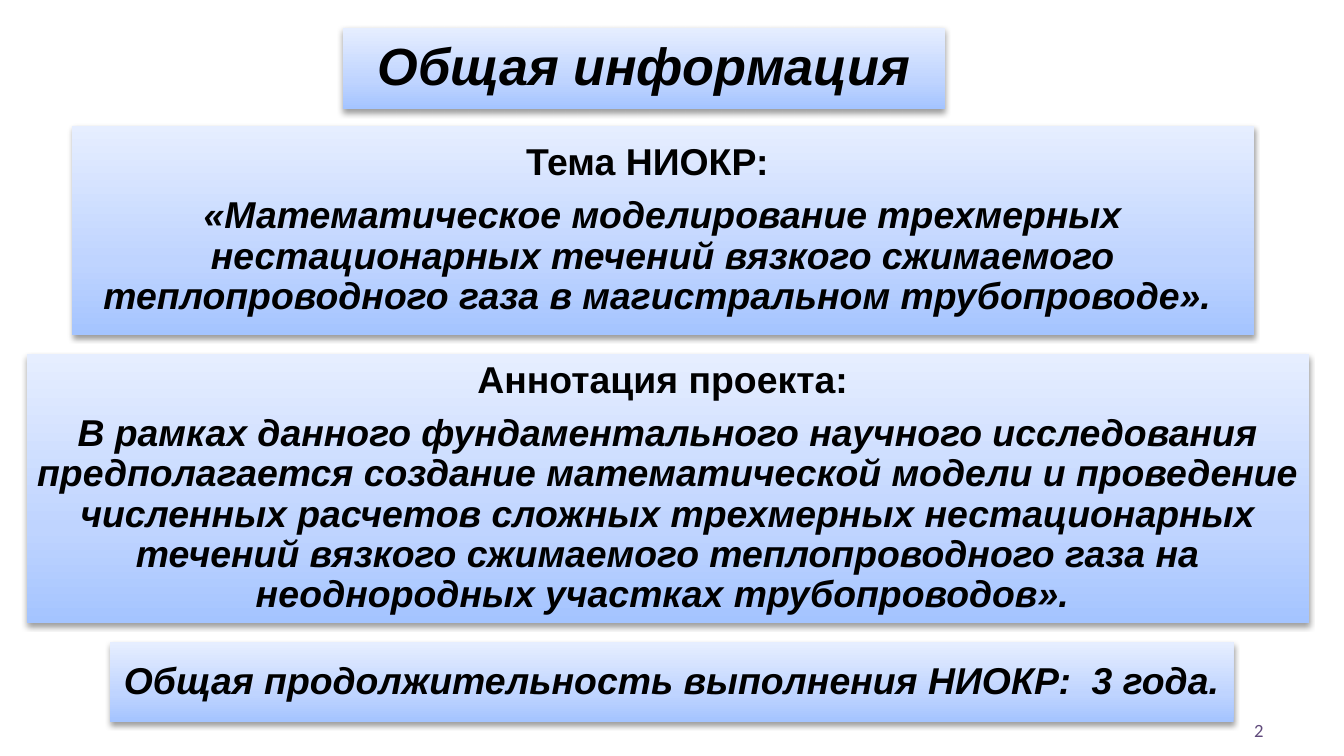
from copy import deepcopy

from lxml.etree import SubElement
from pptx import Presentation
from pptx.dml.color import RGBColor
from pptx.enum.shapes import MSO_SHAPE
from pptx.enum.text import MSO_ANCHOR, MSO_AUTO_SIZE, PP_ALIGN
from pptx.oxml.ns import qn
from pptx.util import Emu, Pt

SCALE = 4572
STOPS = [(0, "A4C4FF"), (0.35, "BFD4FF"), (1, "E6EEFF")]


def px(num):
    """Turn px into EMU."""
    return Emu(num * SCALE)


def tint(code):
    """Turn a hex string into a colour."""
    return RGBColor.from_string(code)


def place(shape, box):
    """Move a shape to its box."""
    shape.left, shape.top, shape.width, shape.height = map(px, box)


def shade(shape):
    """Give a panel its gradient, soft shadow and no outline."""
    shape.fill.gradient()
    shape.fill.gradient_angle = 90
    props = shape._element.spPr
    stops = props.find(".//" + qn("a:gsLst"))
    stops.append(deepcopy(stops[-1]))
    for stop, (pos, code) in zip(shape.fill.gradient_stops, STOPS):
        stop.position = pos
        stop.color.rgb = tint(code)
    shape.line.fill.background()
    shape.shadow.inherit = False
    cast = SubElement(props.find(qn("a:effectLst")), qn("a:outerShdw"),
                      blurRad=str(Pt(3.1)), dist=str(Pt(1.6)),
                      dir="5400000", rotWithShape="0")
    black = SubElement(cast, qn("a:srgbClr"), val="000000")
    SubElement(black, qn("a:alpha"), val="38000")


def write(shape, rows, size, inset):
    """Fill a panel with rows of text, slant flag and right indent."""
    frame = shape.text_frame
    frame.word_wrap = True
    frame.auto_size = MSO_AUTO_SIZE.NONE
    frame.vertical_anchor = MSO_ANCHOR.MIDDLE
    frame.margin_left = frame.margin_right = px(inset)
    frame.margin_top = frame.margin_bottom = px(inset)
    frame.text = "\n".join(row[0] for row in rows)
    for para, (_, slant, indent) in zip(frame.paragraphs, rows):
        para.alignment = PP_ALIGN.CENTER
        para.line_spacing = 0.9
        para.space_before = Pt(0)
        para.space_after = Pt(size * 0.35)
        para._p.get_or_add_pPr().set("marR", str(px(indent)))
        font = para.font
        font.name, font.size = "Arial", Pt(size)
        font.bold, font.italic = True, slant
        font.color.rgb = tint("000000")


def head(slide, box, text):
    """Style the title as a panel."""
    shape = slide.shapes.title
    place(shape, box)
    shade(shape)
    write(shape, [(text, True, 0)], 28, 4)


def panel(slide, box, rows):
    """Add a text panel."""
    shape = slide.shapes.add_shape(MSO_SHAPE.RECTANGLE, *map(px, box))
    shade(shape)
    write(shape, rows, 20, 2)


def folio(slide, box, text):
    """Add the page number."""
    frame = slide.shapes.add_textbox(*map(px, box)).text_frame
    frame.word_wrap = True
    frame.vertical_anchor = MSO_ANCHOR.MIDDLE
    para = frame.paragraphs[0]
    para.text = text
    para.alignment = PP_ALIGN.RIGHT
    para.font.name, para.font.size = "Calibri", Pt(10)
    para.font.color.rgb = tint("604A7B")


def main():
    """Build and save the slide."""
    deck = Presentation()
    deck.slide_width, deck.slide_height = px(2000), px(1125)
    slide = deck.slides.add_slide(deck.slide_layouts[5])
    folio(slide, (1434, 1057, 466, 60), "2")
    head(slide, (510, 41, 896, 122), "Общая информация")
    panel(slide, (107, 187, 1759, 312), [
        ("Тема НИОКР: ", False, 31),
        ("«Математическое моделирование трехмерных нестационарных течений "
         "вязкого сжимаемого теплопроводного газа в магистральном "
         "трубопроводе». ", True, 0),
    ])
    panel(slide, (40, 527, 1908, 400), [
        ("Аннотация проекта: ", False, 0),
        ("В рамках данного фундаментального научного исследования "
         "предполагается создание математической модели и проведение "
         "численных расчетов сложных трехмерных нестационарных течений "
         "вязкого сжимаемого теплопроводного газа на неоднородных участках "
         "трубопроводов». ", True, 0),
    ])
    panel(slide, (164, 956, 1672, 118), [
        ("Общая продолжительность выполнения НИОКР:  3 года.", True, 0),
    ])
    deck.save("out.pptx")


if __name__ == "__main__":
    main()
